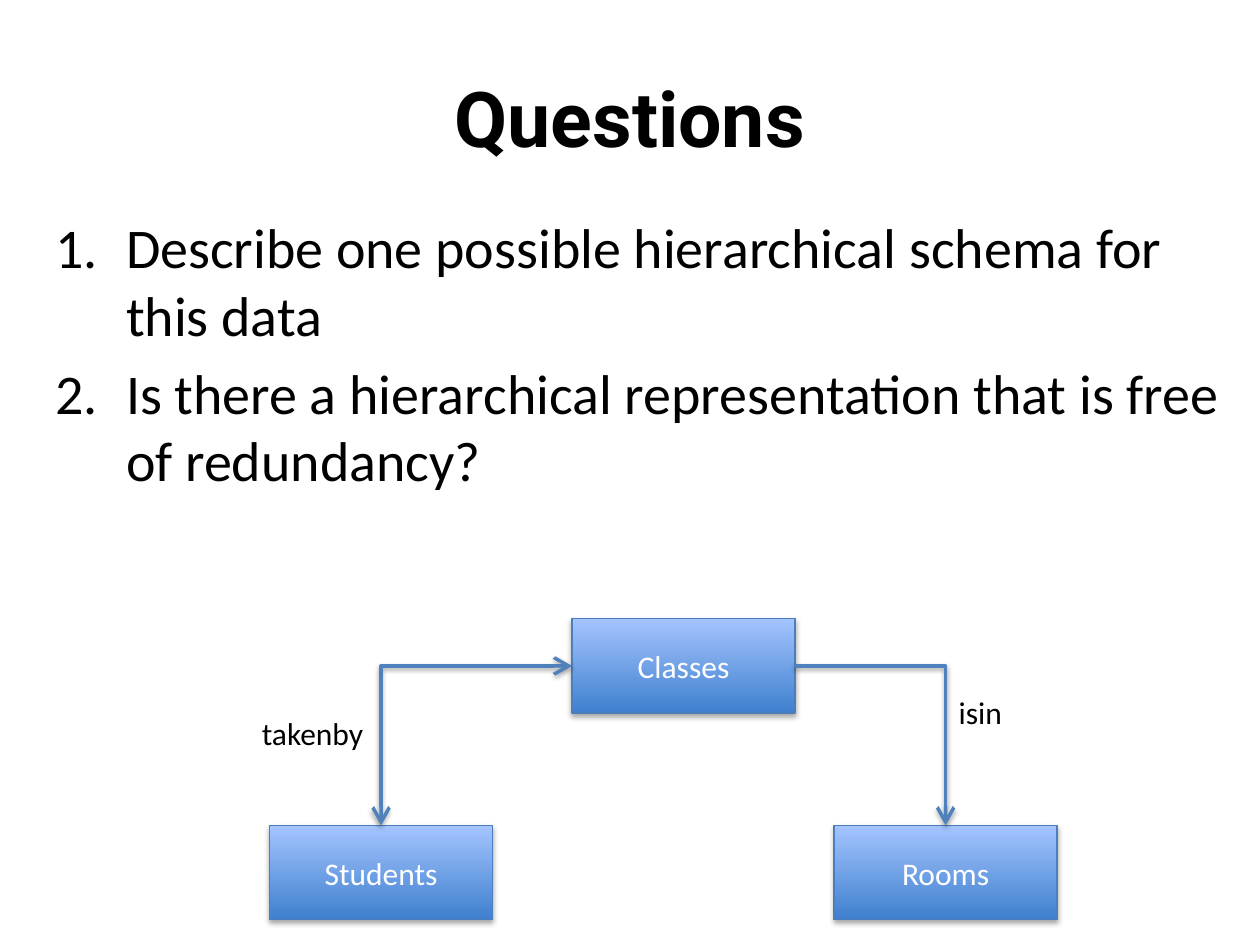
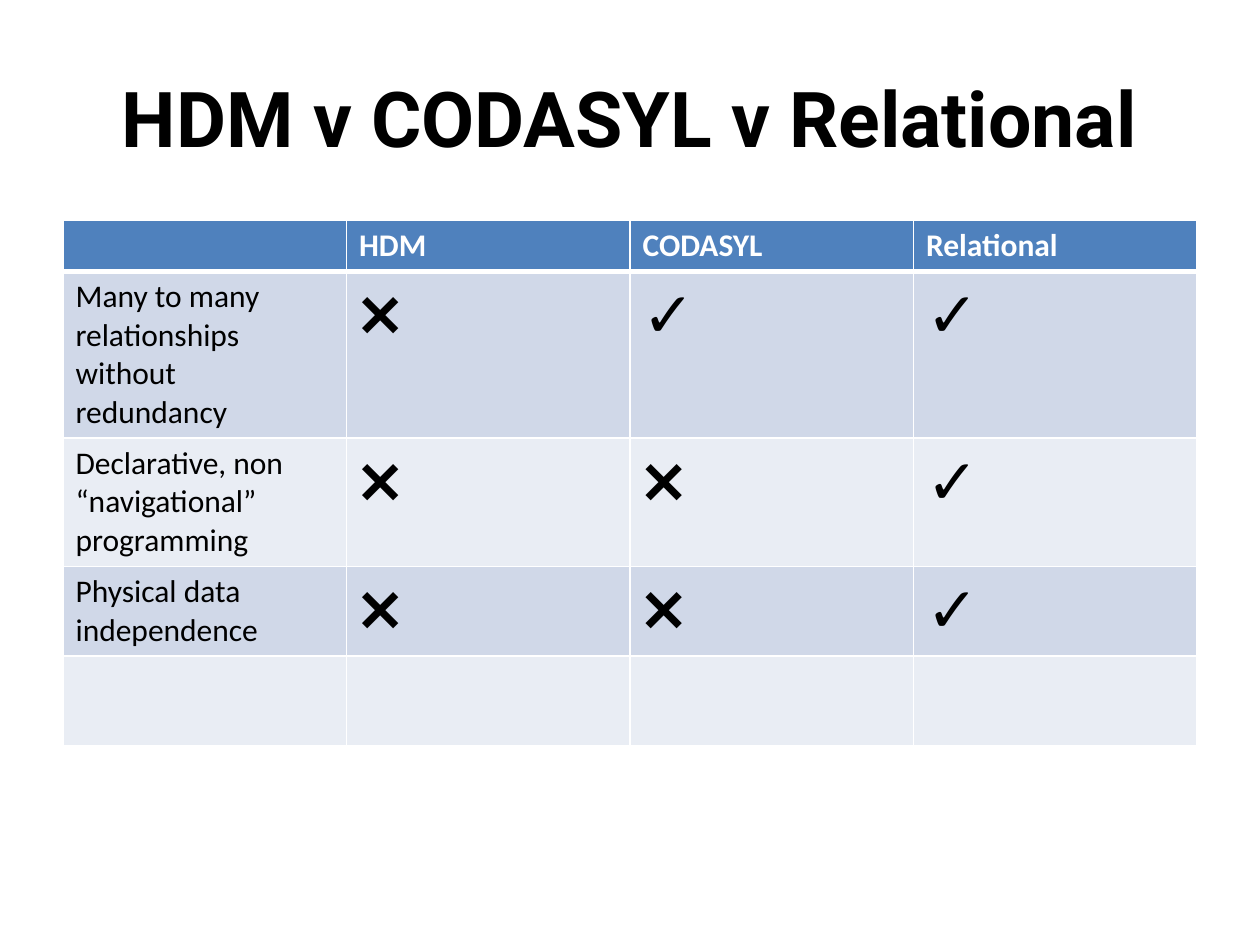
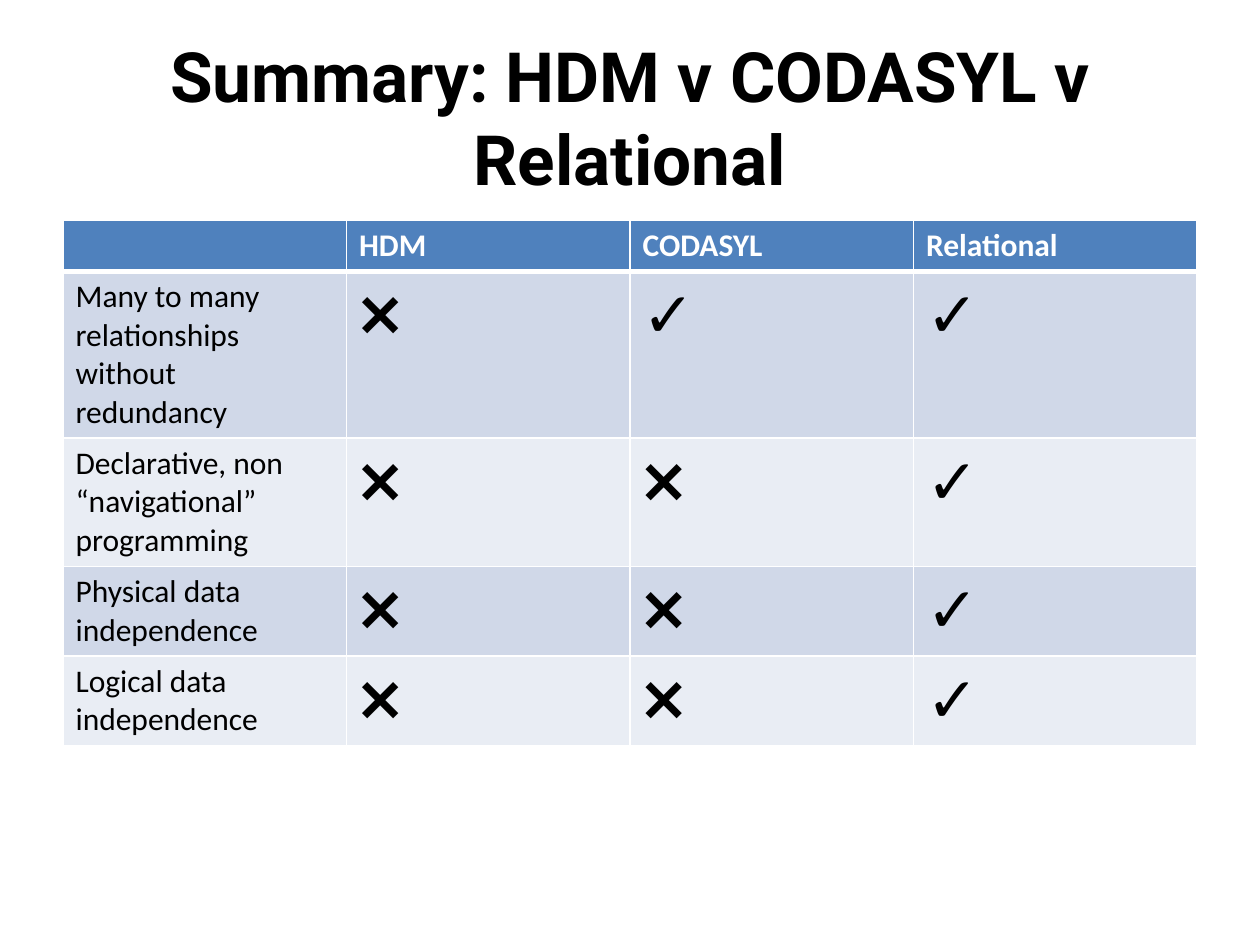
"""Builds three slides comparing hierarchical, network and relational data models."""
from lxml.etree import SubElement
from pptx import Presentation
from pptx.dml.color import RGBColor
from pptx.enum.shapes import MSO_CONNECTOR, MSO_SHAPE
from pptx.enum.text import MSO_ANCHOR, MSO_AUTO_SIZE, PP_ALIGN
from pptx.oxml.ns import qn
from pptx.util import Inches, Pt

COLORS = {
    "text": "000000",
    "white": "FFFFFF",
    "accent": "4F81BD",
    "box_dark": "3F80CE",
    "box_light": "A4C4FF",
    "box_line": "4B7EBC",
    "band_dark": "D0D8E8",
    "band_light": "E9EDF4",
}
TITLE_FONT, BODY_FONT = "Roboto", "Calibri"
BOX_SIZE = (1.77, 0.75)
LABEL_SIZE = (1.04, 0.4)
COLUMN_WIDTH = 2.25
ROW_HEIGHTS = [0.4, 1.32, 1.02, 0.71, 0.71]
NO, YES = "❌", "✓"
HEADER = ["", "HDM", "CODASYL", "Relational"]
COMPARISON = [
    ["Many to many relationships without redundancy", NO, YES, YES],
    ["Declarative, non “navigational” programming", NO, NO, YES],
    ["Physical data independence", NO, NO, YES],
]
LOGICAL = ["Logical data independence", NO, NO, YES]


def rgb(name):
    return RGBColor.from_string(COLORS[name])


def add_run(p, text, size, color="text", font=BODY_FONT, bold=False):
    r = p.add_run()
    r.text = text
    r.font.size = Pt(size)
    r.font.name = font
    r.font.bold = bold
    r.font.color.rgb = rgb(color)


def place(sp, left, top, width, height):
    sp.left, sp.top = Inches(left), Inches(top)
    sp.width, sp.height = Inches(width), Inches(height)


def add_slide(prs, layout, title, size=44):
    slide = prs.slides.add_slide(prs.slide_layouts[layout])
    sp = slide.shapes.title
    place(sp, 0.5, 0.3, 9, 1.25)
    tf = sp.text_frame
    tf.auto_size = MSO_AUTO_SIZE.NONE
    tf.vertical_anchor = MSO_ANCHOR.MIDDLE
    p = tf.paragraphs[0]
    p.alignment = PP_ALIGN.CENTER
    add_run(p, title, size, font=TITLE_FONT, bold=True)
    return slide


def add_numbered_list(slide, items):
    sp = slide.placeholders[1]
    place(sp, 0.34, 1.64, 9.5, 4.95)
    tf = sp.text_frame
    tf.auto_size = MSO_AUTO_SIZE.NONE
    for i, item in enumerate(items):
        p = tf.add_paragraph() if i else tf.paragraphs[0]
        add_run(p, item, 32)
        pPr = p._p.get_or_add_pPr()
        pPr.set("marL", str(Inches(0.56)))
        pPr.set("indent", str(-Inches(0.56)))
        SubElement(pPr, qn("a:buFont"), typeface="+mj-lt")
        SubElement(pPr, qn("a:buAutoNum"), type="arabicPeriod")


def add_shadow(sp, distance, opacity):
    effects = SubElement(sp._element.spPr, qn("a:effectLst"))
    shadow = SubElement(effects, qn("a:outerShdw"), blurRad=str(Pt(3.1)),
                        dist=str(Pt(distance)), dir="5400000", rotWithShape="0")
    color = SubElement(shadow, qn("a:srgbClr"), val=COLORS["text"])
    SubElement(color, qn("a:alpha"), val=str(opacity * 1000))


def add_box(slide, text, left, top):
    sp = slide.shapes.add_shape(MSO_SHAPE.RECTANGLE, 0, 0, 0, 0)
    place(sp, left, top, *BOX_SIZE)
    sp.fill.gradient()
    sp.fill.gradient_angle = 90
    for stop, color, position in zip(sp.fill.gradient_stops, ("box_dark", "box_light"), (0, 1)):
        stop.color.rgb = rgb(color)
        stop.position = position
    sp.line.color.rgb = rgb("box_line")
    sp.line.width = Pt(0.75)
    add_shadow(sp, 1.8, 35)
    tf = sp.text_frame
    tf.vertical_anchor = MSO_ANCHOR.MIDDLE
    p = tf.paragraphs[0]
    p.alignment = PP_ALIGN.CENTER
    add_run(p, text, 18, "white")
    return sp


def add_elbow(slide, start, side, end, arrow_ends):
    line = slide.shapes.add_connector(MSO_CONNECTOR.ELBOW, 0, 0, 0, 0)
    line.begin_connect(start, side)
    line.end_connect(end, 0)
    line._element.spPr.find(qn("a:prstGeom")).set("prst", "bentConnector2")
    line.line.color.rgb = rgb("accent")
    line.line.width = Pt(2)
    ln = line.line._get_or_add_ln()
    for arrow_end in arrow_ends:
        SubElement(ln, qn(f"a:{arrow_end}"), type="arrow", w="lg", len="lg")
    add_shadow(line, 1.6, 38)


def add_label(slide, text, left, top):
    sp = slide.shapes.add_textbox(0, 0, 0, 0)
    place(sp, left, top, *LABEL_SIZE)
    tf = sp.text_frame
    tf.word_wrap = True
    add_run(tf.paragraphs[0], text, 18)


def add_cell_borders(cell, bottom):
    tcPr = cell._tc.get_or_add_tcPr()
    for side, width in (("L", 1), ("R", 1), ("T", 1), ("B", bottom)):
        ln = SubElement(tcPr, qn(f"a:ln{side}"), w=str(Pt(width)))
        fill = SubElement(ln, qn("a:solidFill"))
        SubElement(fill, qn("a:srgbClr"), val=COLORS["white"])


def format_cell(cell, text, row, col):
    if row == 0:
        fill, size, color = "accent", 18, "white"
    else:
        fill = "band_dark" if row % 2 else "band_light"
        size, color = 36 if col else 18, "text"
    add_cell_borders(cell, 1 if row else 3)
    cell.fill.solid()
    cell.fill.fore_color.rgb = rgb(fill)
    if text:
        add_run(cell.text_frame.paragraphs[0], text, size, color, bold=row == 0)


def add_comparison(slide, last_row):
    rows = [HEADER, *COMPARISON, last_row]
    table = slide.shapes.add_table(
        len(rows), len(HEADER), Inches(0.5), Inches(1.75),
        Inches(COLUMN_WIDTH * len(HEADER)), Inches(sum(ROW_HEIGHTS))).table
    for column in table.columns:
        column.width = Inches(COLUMN_WIDTH)
    for i, (values, height) in enumerate(zip(rows, ROW_HEIGHTS)):
        table.rows[i].height = Inches(height)
        for j, text in enumerate(values):
            format_cell(table.cell(i, j), text, i, j)


def add_schema(slide):
    classes = add_box(slide, "Classes", 4.54, 4.91)
    students = add_box(slide, "Students", 2.14, 6.55)
    rooms = add_box(slide, "Rooms", 6.62, 6.55)
    add_elbow(slide, classes, 1, students, ["headEnd", "tailEnd"])
    add_elbow(slide, classes, 3, rooms, ["tailEnd"])
    add_label(slide, "isin", 7.51, 5.45)
    add_label(slide, "takenby", 1.98, 5.62)


def main():
    prs = Presentation()
    prs.slide_width, prs.slide_height = Inches(10), Inches(7.5)

    slide = add_slide(prs, 1, "Questions")
    add_numbered_list(slide, [
        "Describe one possible hierarchical schema for this data",
        "Is there a hierarchical representation that is free of redundancy?",
    ])
    add_schema(slide)

    slide = add_slide(prs, 5, "HDM v CODASYL v Relational")
    add_comparison(slide, [""] * len(HEADER))

    slide = add_slide(prs, 5, "Summary: HDM v CODASYL v Relational", 39.6)
    add_comparison(slide, LOGICAL)

    prs.save("out.pptx")


if __name__ == "__main__":
    main()
